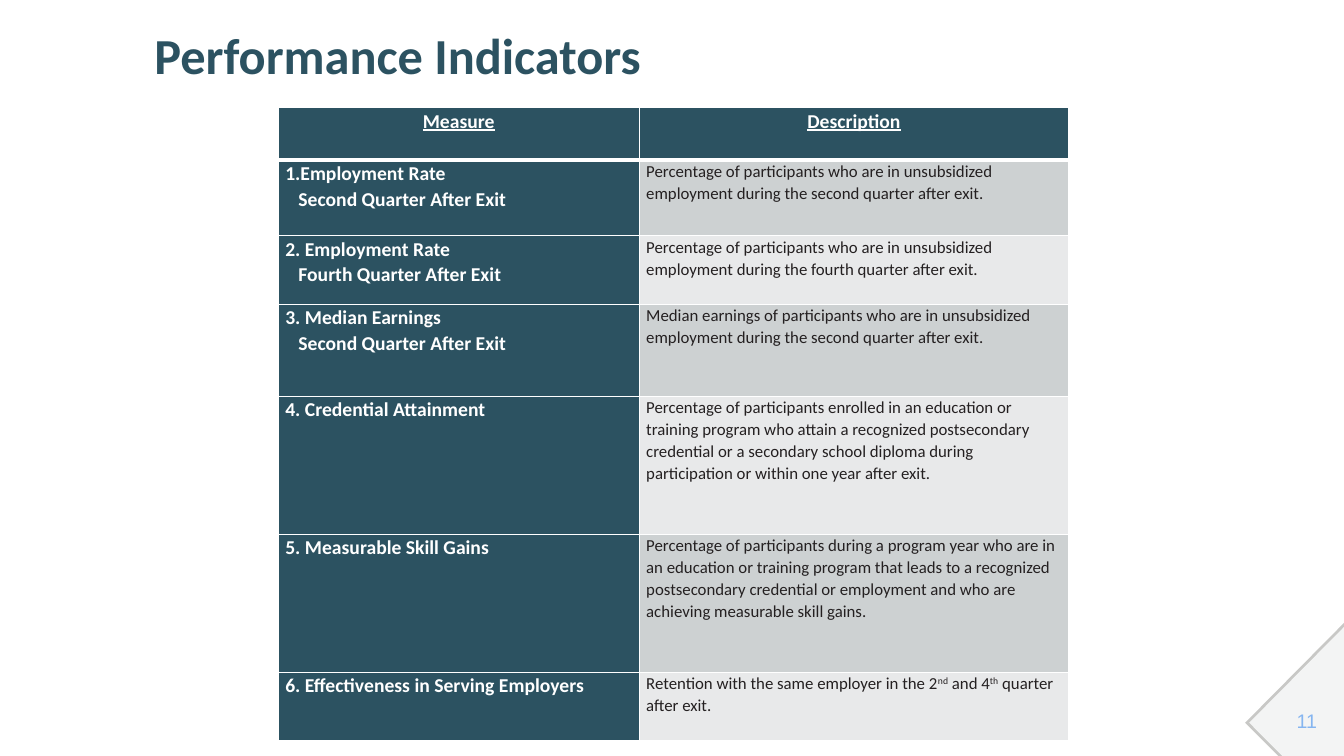
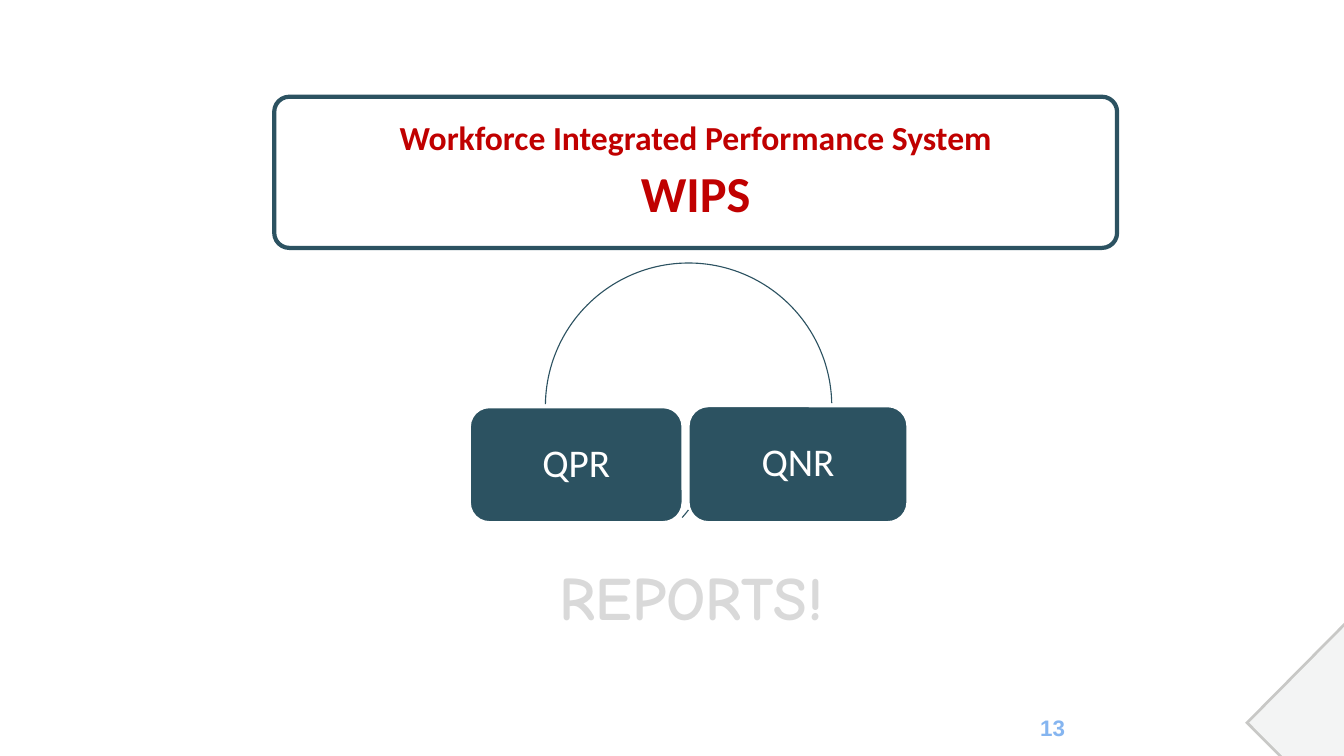
from pptx import Presentation
from pptx.dml.color import RGBColor
from pptx.enum.shapes import MSO_SHAPE
from pptx.enum.text import MSO_ANCHOR, PP_ALIGN
from pptx.oxml import parse_xml
from pptx.oxml.ns import nsdecls
from pptx.util import Inches, Pt

TEAL = RGBColor(0x2C, 0x52, 0x61)
WHITE = RGBColor(0xFF, 0xFF, 0xFF)
INK = RGBColor(0x24, 0x20, 0x21)
RED = RGBColor(0xC0, 0x00, 0x00)
BLUE = RGBColor(0x85, 0xB5, 0xF0)
PALE = RGBColor(0xD9, 0xD9, 0xD9)
EDGE = RGBColor(0xC8, 0xC8, 0xC6)
FOLD = RGBColor(0xF3, 0xF4, 0xF4)
BANDS = (RGBColor(0xCD, 0xD1, 0xD2), RGBColor(0xE8, 0xE9, 0xEA))

ROUND, ARC = MSO_SHAPE.ROUNDED_RECTANGLE, MSO_SHAPE.ARC
LEFT, CENTER, RIGHT = PP_ALIGN.LEFT, PP_ALIGN.CENTER, PP_ALIGN.RIGHT
MIDDLE, BOTTOM, TOP = MSO_ANCHOR.MIDDLE, MSO_ANCHOR.BOTTOM, MSO_ANCHOR.TOP

TITLE_ONLY, BLANK = 5, 6
COLS = (3.58, 4.26)
ROWS = (0.52, 0.75, 0.68, 0.91, 1.37, 1.37, 0.68)
MEASURES = (
    (("1.Employment Rate", "Second Quarter After Exit"),
     ("Percentage of participants who are in unsubsidized employment "
      "during the second quarter after exit.",)),
    (("2. Employment Rate", "Fourth Quarter After Exit"),
     ("Percentage of participants who are in unsubsidized employment "
      "during the fourth quarter after exit.",)),
    (("3. Median Earnings", "Second Quarter After Exit"),
     ("Median earnings of participants who are in unsubsidized employment "
      "during the second quarter after exit.",)),
    (("4. Credential Attainment",),
     ("Percentage of participants enrolled in an education or training "
      "program who attain a recognized postsecondary credential or a "
      "secondary school diploma during participation or within one year "
      "after exit.",)),
    (("5. Measurable Skill Gains",),
     ("Percentage of participants during a program year who are in an "
      "education or training program that leads to a recognized "
      "postsecondary credential or employment and who are achieving "
      "measurable skill gains.",)),
    (("6. Effectiveness in Serving Employers",),
     ("Retention with the same employer in the 2", "nd", " and 4", "th",
      " quarter after exit.")),
)


def place(box):
    """Turn a tuple of inches into lengths."""
    return [Inches(n) for n in box]


def write(para, runs, size, color, bold=False, face="Calibri", align=LEFT,
          space=1.0, under=False):
    """Fill a paragraph run by run, raising every second run."""
    para.alignment = align
    para.line_spacing = space
    for i, text in enumerate(runs):
        run = para.add_run()
        run.text = text
        font = run.font
        font.name, font.size, font.bold = face, Pt(size), bold
        font.underline = under
        font.color.rgb = color
        if i % 2:
            run._r.get_or_add_rPr().set("baseline", "30000")


def label(slide, box, text, size, color, anchor=MIDDLE, **style):
    """Add a text box with one line."""
    frame = slide.shapes.add_textbox(*place(box)).text_frame
    frame.word_wrap = True
    frame.vertical_anchor = anchor
    write(frame.paragraphs[0], [text], size, color, **style)


def shape(slide, kind, box, line, width, fill=None):
    """Add a preset shape with an outline and an optional fill."""
    item = slide.shapes.add_shape(kind, *place(box))
    item.shadow.inherit = False
    item.line.color.rgb, item.line.width = line, Pt(width)
    if fill is None:
        item.fill.background()
    else:
        item.fill.solid()
        item.fill.fore_color.rgb = fill
    return item


def card(slide, box, lines, color, line, width, fill=None, curve=0.17):
    """Add a rounded box with centred lines of (text, size, bold)."""
    item = shape(slide, ROUND, box, line, width, fill)
    item.adjustments[0] = curve
    frame = item.text_frame
    frame.word_wrap = True
    frame.vertical_anchor = MIDDLE
    for i, (text, size, bold) in enumerate(lines):
        para = frame.add_paragraph() if i else frame.paragraphs[0]
        para.space_before = Pt(8 if i else 0)
        write(para, [text], size, color, bold, align=CENTER, space=0.9)


def arc(slide, box, start, end):
    """Add a thin arc between two angles in degrees."""
    item = shape(slide, ARC, box, TEAL, 0.79)
    item.adjustments[0] = start * 0.6
    item.adjustments[1] = end * 0.6


def corner(slide):
    """Draw the folded corner at the lower right."""
    for top, tip, foot, color in ((6.18, 12.35, 12.68, EDGE),
                                  (6.22, 12.39, 12.72, FOLD)):
        pen = slide.shapes.build_freeform(Inches(13.33), Inches(top))
        pen.add_line_segments([place(spot) for spot in
                               ((13.33, 7.5), (foot, 7.5), (tip, 7.17))])
        item = pen.convert_to_shape()
        item.shadow.inherit = False
        item.fill.solid()
        item.fill.fore_color.rgb = color
        item.line.fill.background()


def start(deck, layout):
    """Add a slide with the shared corner."""
    slide = deck.slides.add_slide(deck.slide_layouts[layout])
    corner(slide)
    return slide


def head(slide, text):
    """Place and format the title."""
    title = slide.shapes.title
    title.left, title.top, title.width, title.height = place(
        (1.43, 0.17, 10, 0.73))
    frame = title.text_frame
    frame.word_wrap = True
    frame.vertical_anchor = BOTTOM
    write(frame.paragraphs[0], [text], 36, TEAL, True, space=0.9)


def dress(cell, fill, base=1):
    """Set the fill, margins and white borders of a cell."""
    cell.fill.solid()
    cell.fill.fore_color.rgb = fill
    cell.margin_left = cell.margin_right = Inches(0.07)
    cell.margin_top = cell.margin_bottom = 0
    cell.vertical_anchor = TOP
    props = cell._tc.get_or_add_tcPr()
    for i, (side, width) in enumerate(
            (("L", 1), ("R", 1), ("T", 1), ("B", base))):
        props.insert(i, parse_xml(
            f'<a:ln{side} {nsdecls("a")} w="{Pt(width)}"><a:solidFill>'
            f'<a:srgbClr val="{WHITE}"/></a:solidFill></a:ln{side}>'))


def grid(slide):
    """Add the table of measures."""
    box = place((2.76, 1.07, sum(COLS), sum(ROWS)))
    table = slide.shapes.add_table(len(ROWS), len(COLS), *box).table
    table.first_row = table.horz_banding = False
    for col, width in zip(table.columns, COLS):
        col.width = Inches(width)
    for row, height in zip(table.rows, ROWS):
        row.height = Inches(height)
    for i, text in enumerate(("Measure", "Description")):
        cell = table.cell(0, i)
        dress(cell, TEAL, 3)
        write(cell.text_frame.paragraphs[0], [text], 14, WHITE, True,
              align=CENTER, space=1.07, under=True)
    for i, (names, about) in enumerate(MEASURES):
        name, note = table.cell(i + 1, 0), table.cell(i + 1, 1)
        dress(name, TEAL)
        dress(note, BANDS[i % 2])
        frame = name.text_frame
        for j, text in enumerate(names):
            para = frame.add_paragraph() if j else frame.paragraphs[0]
            if j:
                para._p.get_or_add_pPr().set("marL", str(Inches(0.13)))
            write(para, [text], 14, WHITE, True, space=1.07)
        write(note.text_frame.paragraphs[0], about, 12, INK, space=1.07)


def measures(deck):
    """Build the slide of indicators."""
    slide = start(deck, TITLE_ONLY)
    label(slide, (12.45, 6.95, 0.71, 0.4), "11", 14, BLUE,
          face="Arial", align=RIGHT)
    head(slide, "Performance Indicators")
    grid(slide)


def reports(deck):
    """Build the slide of the system and its reports."""
    slide = start(deck, BLANK)
    label(slide, (9.33, 7.02, 2.22, 0.4), "13", 16, BLUE, bold=True,
          face="Arial", align=CENTER)
    card(slide, (2.72, 0.96, 8.36, 1.5),
         (("Workforce Integrated Performance System", 24, True),
          ("WIPS", 36, True)), RED, TEAL, 3, curve=0.1)
    label(slide, (2.62, 5.61, 8.48, 0.85), "REPORTS!", 44, PALE, TOP,
          bold=True, face="Comic Neue", align=CENTER, space=0.85)
    for text, box in (("QNR", (6.83, 4.03, 2.17, 1.15)),
                      ("QPR", (4.66, 4.04, 2.11, 1.14))):
        card(slide, box, ((text, 28, False),), WHITE, WHITE, 1.5, TEAL)
    arc(slide, (4.54, 3.01, 2.55, 2.55), 37.4, 41.8)
    arc(slide, (5.41, 2.61, 2.84, 2.84), 180.8, 358.8)


def main():
    """Build and save the deck."""
    deck = Presentation()
    deck.slide_width, deck.slide_height = place((13.33, 7.5))
    measures(deck)
    reports(deck)
    deck.save("out.pptx")


if __name__ == "__main__":
    main()
